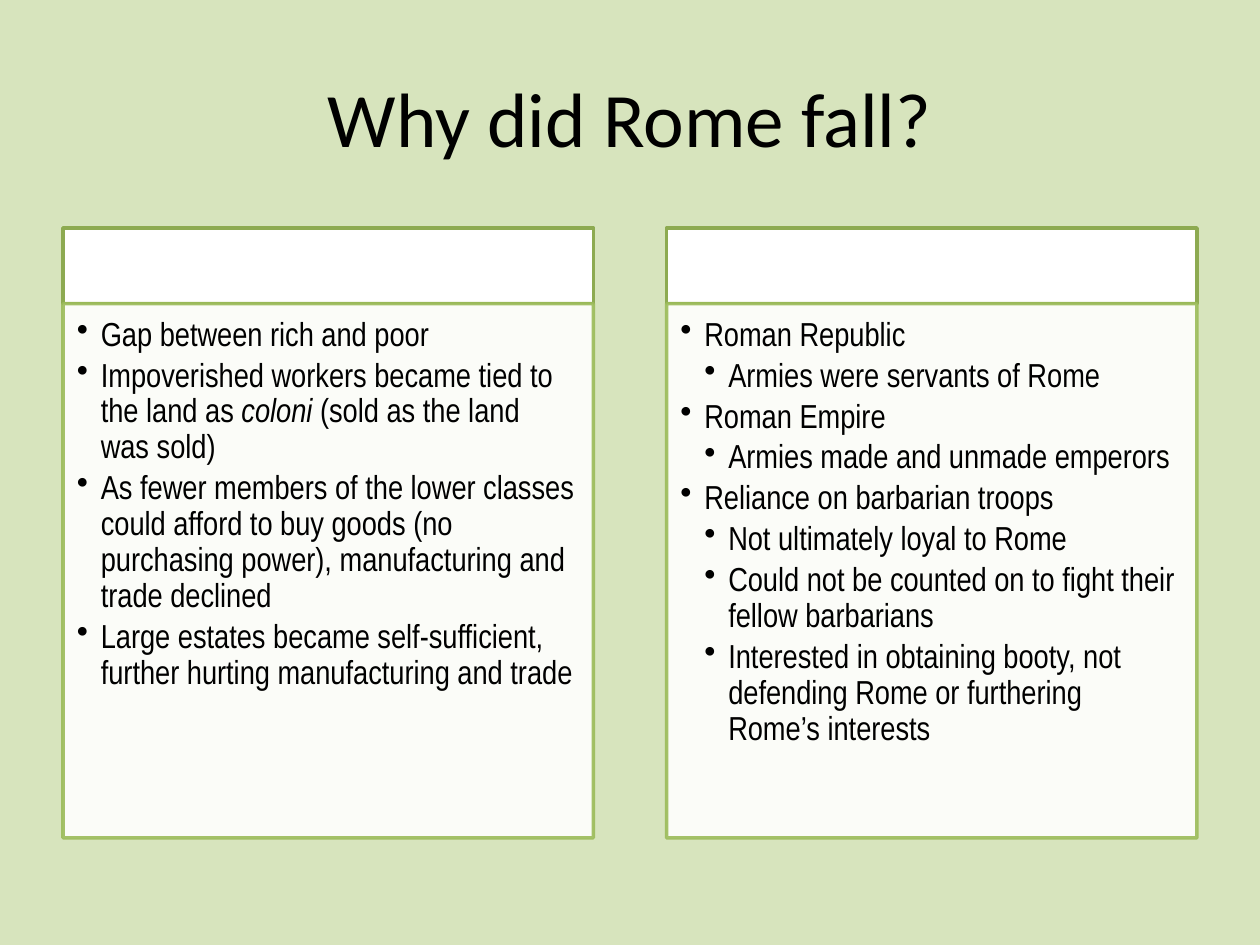
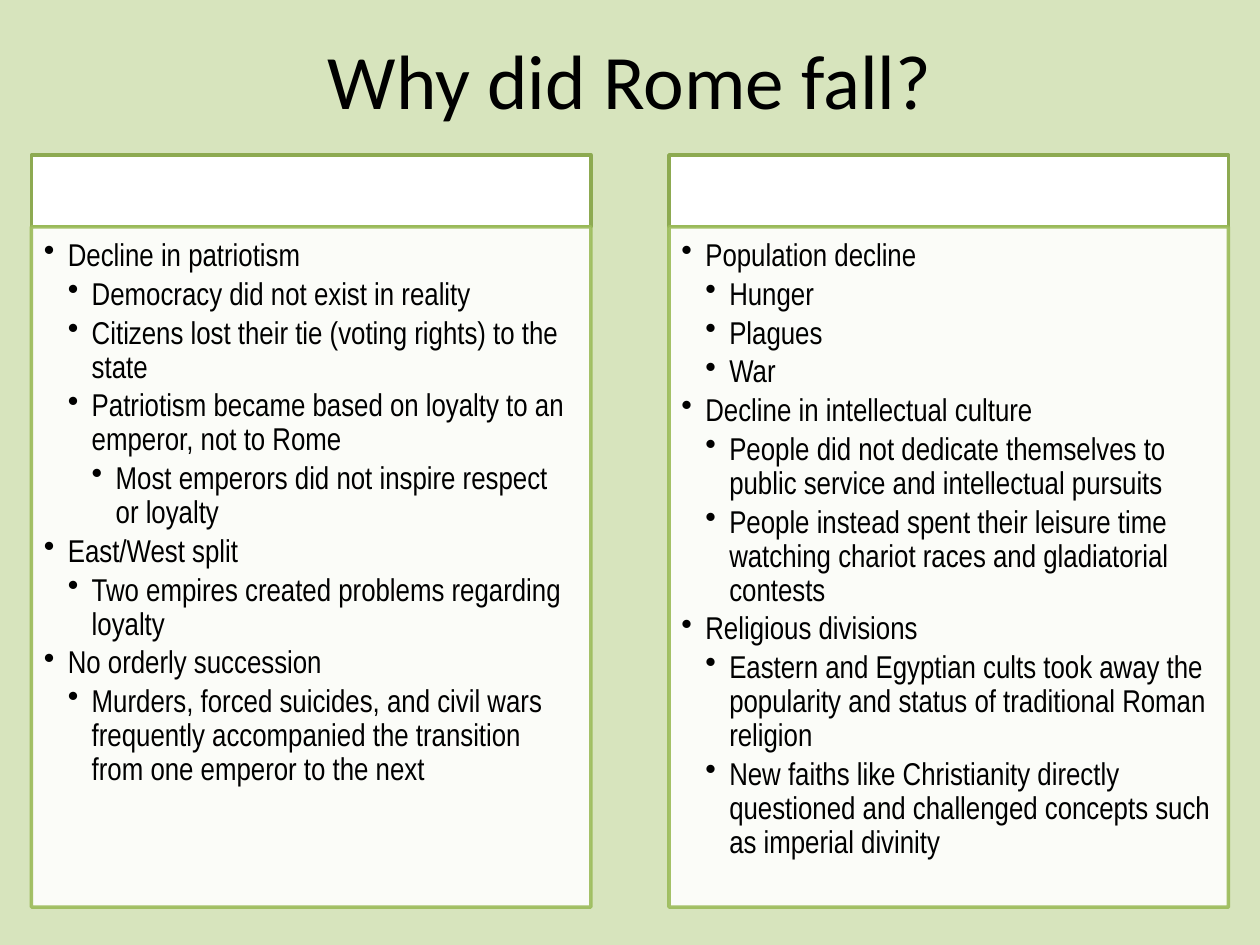
from lxml import etree
from pptx import Presentation
from pptx.dml.color import RGBColor
from pptx.enum import shapes, text
from pptx.oxml import ns
from pptx.util import Inches, Pt

BACKGROUND = RGBColor(0xD7, 0xE4, 0xBD)
WHITE = RGBColor(0xFF, 0xFF, 0xFF)
BLACK = RGBColor(0, 0, 0)
HEADER_LINE = RGBColor(0x8D, 0xAA, 0x51)
BODY_LINE = RGBColor(0x9B, 0xBB, 0x59)

SLIDE_W = 10
INDENT = 0.19
TITLE = "Why did Rome fall?"

# Bullets are (level, text); asterisks enclose italics.
ECONOMY = [
    (0, "Gap between rich and poor"),
    (0, "Impoverished workers became tied to the land as *coloni* (sold as the land was sold)"),
    (0, "As fewer members of the lower classes could afford to buy goods "
        "(no purchasing power), manufacturing and trade declined"),
    (0, "Large estates became self-sufficient, further hurting manufacturing and trade"),
]
ARMY = [
    (0, "Roman Republic"),
    (1, "Armies were servants of Rome"),
    (0, "Roman Empire"),
    (1, "Armies made and unmade emperors"),
    (0, "Reliance on barbarian troops"),
    (1, "Not ultimately loyal to Rome"),
    (1, "Could not be counted on to fight their fellow barbarians"),
    (1, "Interested in obtaining booty, not defending Rome or furthering Rome’s interests"),
]
POLITICS = [
    (0, "Decline in patriotism"),
    (1, "Democracy did not exist in reality"),
    (1, "Citizens lost their tie (voting rights) to the state"),
    (1, "Patriotism became based on loyalty to an emperor, not to Rome"),
    (2, "Most emperors did not inspire respect or loyalty"),
    (0, "East/West split"),
    (1, "Two empires created problems regarding loyalty"),
    (0, "No orderly succession"),
    (1, "Murders, forced suicides, and civil wars frequently accompanied "
        "the transition from one emperor to the next"),
]
SOCIETY = [
    (0, "Population decline"),
    (1, "Hunger"),
    (1, "Plagues"),
    (1, "War"),
    (0, "Decline in intellectual culture"),
    (1, "People did not dedicate themselves to public service and intellectual pursuits"),
    (1, "People instead spent their leisure time watching chariot races "
        "and gladiatorial contests"),
    (0, "Religious divisions"),
    (1, "Eastern and Egyptian cults took away the popularity and status "
        "of traditional Roman religion"),
    (1, "New faiths like Christianity directly questioned and challenged "
        "concepts such as imperial divinity"),
]


def write(p, content, *, font, size, color=BLACK):
    """Add content to a paragraph, with the parts between asterisks in italics."""
    for i, part in enumerate(content.split("*")):
        r = p.add_run()
        r.text = part
        r.font.name, r.font.size = font, Pt(size)
        r.font.color.rgb = color
        if i % 2:
            r.font.italic = True


def set_alpha(fill, percent):
    for color in fill._xPr.iter(ns.qn("a:srgbClr")):
        etree.SubElement(color, ns.qn("a:alpha"), val=str(percent * 1000))


def add_title(s, top):
    tf = s.shapes.add_textbox(Inches(0.5), Inches(top), Inches(9), Inches(1.25)).text_frame
    tf.word_wrap = True
    tf.vertical_anchor = text.MSO_ANCHOR.MIDDLE
    p = tf.paragraphs[0]
    p.alignment = text.PP_ALIGN.CENTER
    write(p, TITLE, font="Calibri", size=44)


def add_box(s, left, top, width, height, line):
    sp = s.shapes.add_shape(shapes.MSO_SHAPE.RECTANGLE, Inches(left), Inches(top),
                            Inches(width), Inches(height))
    sp.shadow.inherit = False
    sp.fill.solid()
    sp.fill.fore_color.rgb = WHITE
    sp.line.color.rgb = line
    sp.line.width = Pt(2)
    return sp


def add_bullets(tf, bullets, size, inset):
    tf.word_wrap = True
    tf.vertical_anchor = text.MSO_ANCHOR.TOP
    tf.margin_left = tf.margin_top = Inches(inset)
    tf.margin_right, tf.margin_bottom = Inches(inset + 0.04), Inches(inset + 0.06)
    for i, (level, content) in enumerate(bullets):
        p = tf.add_paragraph() if i else tf.paragraphs[0]
        p.level = level
        p.alignment = text.PP_ALIGN.LEFT
        p.line_spacing = 0.9
        p.space_after = Pt(size * 0.15)
        pPr = p._p.get_or_add_pPr()
        pPr.set("marL", str(Inches(INDENT * (level + 1))))
        pPr.set("indent", str(-Inches(INDENT)))
        etree.SubElement(pPr, ns.qn("a:buChar"), char="•")
        write(p, content, font="Arial Narrow", size=size)


def add_panel(s, bullets, *, left, top, width, header, body, size, inset):
    """Add an empty header band with a bulleted box under it."""
    add_box(s, left, top, width, header, HEADER_LINE)
    sp = add_box(s, left, top + header, width, body, BODY_LINE)
    set_alpha(sp.fill, 90)
    add_bullets(sp.text_frame, bullets, size, inset)


def add_slide(prs, panels, *, title_top, margin, width, **layout):
    s = prs.slides.add_slide(prs.slide_layouts[6])
    s.background.fill.solid()
    s.background.fill.fore_color.rgb = BACKGROUND
    add_title(s, title_top)
    for left, bullets in zip((margin, SLIDE_W - margin - width), panels):
        add_panel(s, bullets, left=left, width=width, **layout)


def main():
    prs = Presentation()
    prs.slide_width, prs.slide_height = Inches(SLIDE_W), Inches(7.5)
    add_slide(prs, (ECONOMY, ARMY), title_top=0.3, margin=0.5, width=4.21,
              top=1.81, header=0.6, body=4.24, size=19, inset=0.11)
    add_slide(prs, (POLITICS, SOCIETY), title_top=0, margin=0.25, width=4.44,
              top=1.23, header=0.57, body=5.4, size=18, inset=0.1)
    prs.save("out.pptx")


if __name__ == "__main__":
    main()
